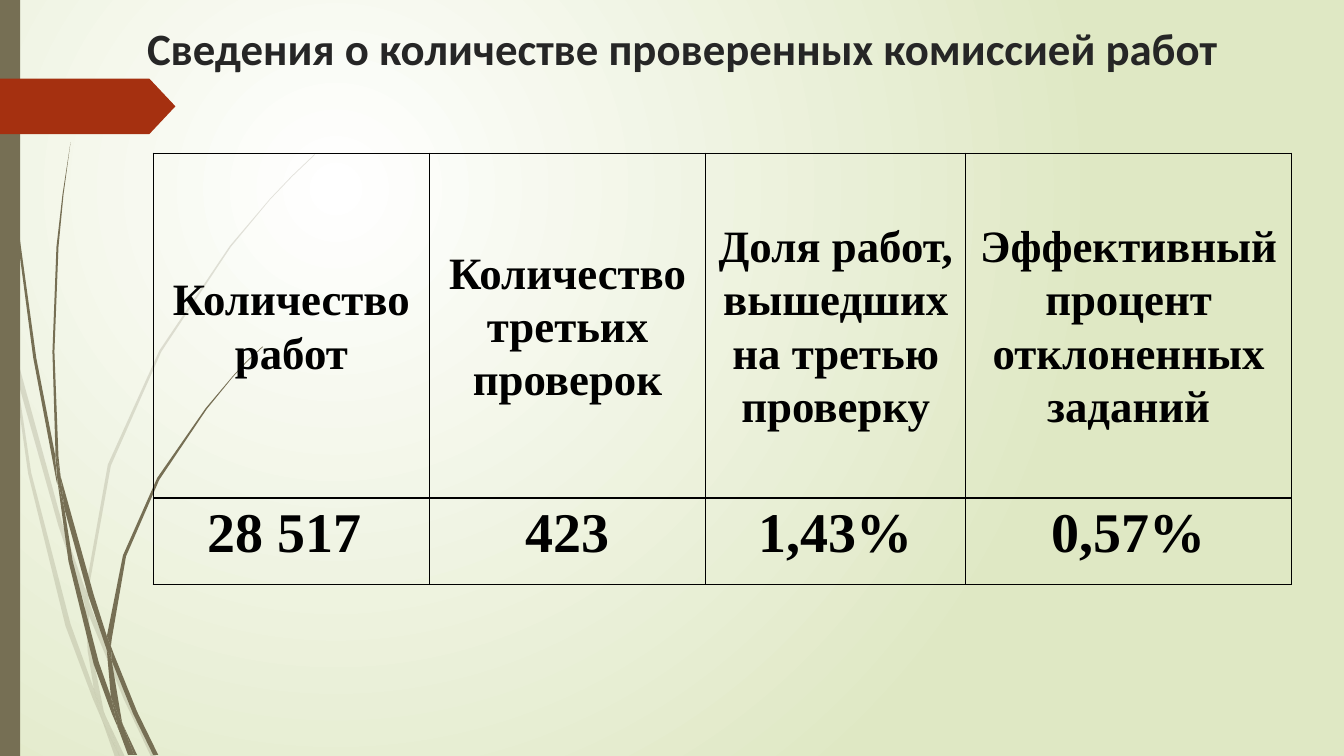
from lxml import etree
from pptx import Presentation
from pptx.dml.color import RGBColor
from pptx.enum import shapes, text
from pptx.oxml import ns
from pptx.util import Inches, Pt

OLIVE = RGBColor(0x76, 0x6F, 0x54)
RED = RGBColor(0xA5, 0x30, 0x10)
WHITE = RGBColor(0xFF, 0xFF, 0xFF)
PALE_GREEN = RGBColor(0xDF, 0xE8, 0xC4)
DARK = RGBColor(0x26, 0x26, 0x26)
BLACK = RGBColor(0, 0, 0)


def paint(shape, color, alpha=100):
    shape.shadow.inherit = False
    shape.line.fill.background()
    shape.fill.solid()
    shape.fill.fore_color.rgb = color
    if alpha < 100:
        tint = shape.fill._xPr.find(".//" + ns.qn("a:srgbClr"))
        etree.SubElement(tint, ns.qn("a:alpha"), val=str(alpha * 1000))


def style_run(paragraph, font_name, size, color):
    font = paragraph.runs[0].font
    font.name, font.size, font.bold = font_name, Pt(size), True
    font.color.rgb = color


deck = Presentation()
deck.slide_width, deck.slide_height = Inches(13.33), Inches(7.5)
page = deck.slides.add_slide(deck.slide_layouts[6])

# Background: glow in the upper left
backdrop = page.background.fill
backdrop.gradient()
for stop, color, position in zip(backdrop.gradient_stops, (WHITE, PALE_GREEN), (0, 1)):
    stop.color.rgb = color
    stop.position = position
gradient = page.background._cSld.find(".//" + ns.qn("a:gradFill"))
gradient.remove(gradient.find(ns.qn("a:lin")))
glow = etree.SubElement(gradient, ns.qn("a:path"), path="circle")
etree.SubElement(glow, ns.qn("a:fillToRect"), l="50000", t="50000", r="100000", b="100000")

# Grass blades: outline points in inches, faint blades behind dark ones
FAINT_BLADES = [
    [(0.11, 3.5), (0.09, 3.22), (0, 2.82), (0, 2.99), (0.1, 3.44)],
    [(0.58, 5.22), (0.84, 5.99), (0.85, 5.86), (0.62, 5.2), (0.14, 3.45), (0.17, 3.76)],
    [(0.92, 6.07), (0.88, 5.96), (0.88, 6.1), (1.23, 6.94), (1.5, 7.51), (1.55, 7.51),
     (1.27, 6.92)],
    [(1.19, 7.51), (1.24, 7.51), (1.05, 7.11)],
    [(0.93, 6.83), (0.7, 6.19), (0.31, 4.69), (0.17, 3.76), (0.11, 3.5), (0.28, 4.7),
     (0.65, 6.21), (0.92, 6.93), (1.01, 7.14), (0.99, 7.07)],
    [(0.84, 5.99), (0.87, 6.46), (0.93, 6.83), (0.96, 6.92), (1.05, 7.11), (1.03, 7.06),
     (0.91, 6.46), (0.88, 6.1), (0.88, 6.08)],
    [(0.88, 5.84), (1.1, 4.62), (1.6, 3.49), (2.29, 2.45), (2.68, 1.98), (2.9, 1.75),
     (3.12, 1.54), (3.12, 1.53), (2.89, 1.75), (2.68, 1.97), (2.28, 2.44), (1.58, 3.48),
     (1.07, 4.61), (0.85, 5.84), (0.85, 5.86), (0.88, 5.96)],
    [(1.01, 7.14), (1.14, 7.51), (1.19, 7.51)],
    [(0.88, 6.08), (0.88, 6.1), (0.88, 5.96), (0.85, 5.86), (0.84, 5.99)],
    [(0.96, 6.92), (0.93, 6.83), (0.99, 7.07), (1.01, 7.14), (1.19, 7.51), (1.05, 7.11)],
]
DARK_BLADES = [
    [(0.07, 1.1), (0.17, 2.33), (0.33, 3.55), (0.56, 4.77), (0.57, 4.81), (0.55, 4.57),
     (0.55, 4.53), (0.36, 3.55), (0.19, 2.32), (0.08, 1.09), (0.05, 0.48), (0.04, 0),
     (0.03, 0), (0.04, 0.48)],
    [(0.88, 5.92), (1.06, 6.45), (1.06, 6.31), (0.93, 5.9), (0.6, 4.72), (0.64, 5.05)],
    [(1.13, 6.49), (1.1, 6.41), (1.11, 6.56), (1.32, 7.08), (1.52, 7.49), (1.57, 7.49),
     (1.36, 7.06)],
    [(1.1, 6.91), (0.98, 6.57), (0.72, 5.56), (0.64, 5.05), (0.57, 4.77), (0.68, 5.57),
     (0.93, 6.59), (1.11, 7.08), (1.17, 7.22), (1.16, 7.17)],
    [(0.6, 4.72), (0.58, 4.53), (0.54, 3.49), (0.58, 2.45), (0.63, 1.93), (0.7, 1.41),
     (0.62, 1.93), (0.56, 2.45), (0.52, 3.49), (0.55, 4.49)],
    [(1.33, 7.49), (1.36, 7.49), (1.22, 7.19)],
    [(0.57, 4.77), (0.64, 5.05), (0.6, 4.72), (0.55, 4.49), (0.55, 4.53)],
    [(1.11, 6.33), (1.25, 5.52), (1.58, 4.76), (2.05, 4.06), (2.31, 3.74), (2.45, 3.59),
     (2.61, 3.44), (2.6, 3.44), (2.45, 3.58), (2.31, 3.73), (2.04, 4.05), (1.56, 4.74),
     (1.22, 5.51), (1.06, 6.31), (1.1, 6.41)],
    [(1.17, 7.22), (1.27, 7.49), (1.31, 7.49)],
    [(1.06, 6.45), (1.1, 6.91), (1.16, 7.06), (1.22, 7.19), (1.21, 7.16), (1.11, 6.56),
     (1.09, 6.51)],
    [(1.06, 6.45), (1.09, 6.51), (1.11, 6.56), (1.1, 6.41), (1.06, 6.31)],
    [(1.16, 7.06), (1.1, 6.91), (1.16, 7.17), (1.17, 7.22), (1.3, 7.49), (1.33, 7.49),
     (1.22, 7.19)],
]
for blades, alpha in ((FAINT_BLADES, 20), (DARK_BLADES, 100)):
    for outline in blades:
        points = [(Inches(x), Inches(y)) for x, y in outline]
        builder = page.shapes.build_freeform(*points[0])
        builder.add_line_segments(points[1:], close=True)
        paint(builder.convert_to_shape(), OLIVE, alpha)

# Side bar and red pointer
bar = page.shapes.add_shape(shapes.MSO_SHAPE.RECTANGLE, 0, 0, Inches(0.2), Inches(7.5))
paint(bar, OLIVE)
pointer = page.shapes.add_shape(
    shapes.MSO_SHAPE.PENTAGON, 0, Inches(0.78), Inches(1.74), Inches(0.55))
pointer.adjustments[0] = 0.47
paint(pointer, RED)

# Title
title = page.shapes.add_textbox(Inches(1.36), Inches(0.16), Inches(11.45), Inches(1.12))
title.text_frame.word_wrap = True
title.text_frame.text = "Сведения о количестве проверенных комиссией работ"
style_run(title.text_frame.paragraphs[0], "Calibri", 32, DARK)

# Table of checked works
COLUMN_WIDTHS = (2.74, 2.74, 2.58, 3.23)
ROWS = [
    (3.42, 32, text.MSO_ANCHOR.MIDDLE,
     ("Количество работ", "Количество третьих проверок",
      "Доля работ, вышедших на третью проверку", "Эффективный процент отклоненных заданий")),
    (0.86, 40, text.MSO_ANCHOR.TOP, ("28 517 ", "423", "1,43%", "0,57%")),
]
table = page.shapes.add_table(
    len(ROWS), len(COLUMN_WIDTHS), Inches(1.52), Inches(1.52), Inches(11.28), Inches(4.28)).table
table.first_row = table.horz_banding = False
for column, width in zip(table.columns, COLUMN_WIDTHS):
    column.width = Inches(width)
for row, (height, size, anchor, values) in zip(table.rows, ROWS):
    row.height = Inches(height)
    for cell, value in zip(row.cells, values):
        cell.text_frame.text = value
        cell.vertical_anchor = anchor
        cell.margin_left = cell.margin_right = Inches(0.07)
        cell.margin_top = cell.margin_bottom = 0
        paragraph = cell.text_frame.paragraphs[0]
        paragraph.alignment = text.PP_ALIGN.CENTER
        paragraph.line_spacing = 1.07
        style_run(paragraph, "Times New Roman", size, BLACK)
        # Borders come before the fill in the cell properties
        properties = cell._tc.get_or_add_tcPr()
        for side in ("lnL", "lnR", "lnT", "lnB"):
            border = etree.SubElement(properties, ns.qn("a:" + side), w=str(Pt(1)))
            solid = etree.SubElement(border, ns.qn("a:solidFill"))
            etree.SubElement(solid, ns.qn("a:srgbClr"), val=str(BLACK))
        cell.fill.background()

deck.save("out.pptx")
